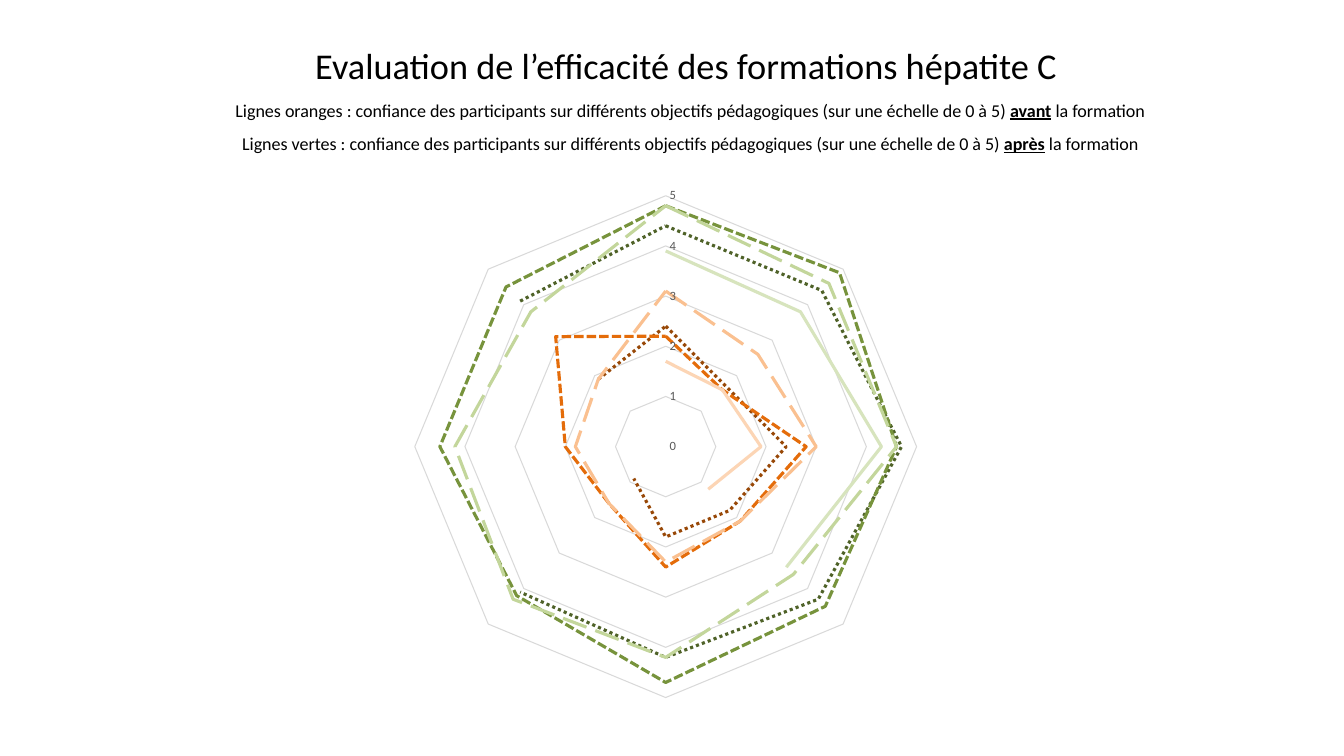
from lxml.etree import SubElement
from pptx import Presentation
from pptx.chart.data import CategoryChartData
from pptx.dml.color import RGBColor
from pptx.enum.chart import XL_CHART_TYPE as ChartType, XL_TICK_MARK as Tick
from pptx.enum.dml import MSO_LINE as Dash
from pptx.enum.text import MSO_ANCHOR as Anchor, MSO_AUTO_SIZE as AutoSize, PP_ALIGN as Align
from pptx.oxml.ns import qn
from pptx.util import Pt

TITLE = "Evaluation de l’efficacité des formations hépatite C "
LEGEND = [("oranges", "avant"), ("vertes", "après")]
SCALE = "confiance des participants sur différents objectifs pédagogiques (sur une échelle de 0 à 5)"

# Each group of trainees: dash, then (colour, scores) before and after
GROUPS = [
    (Dash.ROUND_DOT,
     ("984807", (2.4, 1.7, 2.4, 1.8, 1.8, 0.9, None, 1.9)),
     ("4F6228", (4.4, 4.4, 4.7, 4.3, 4.2, 4.1, None, 4.1))),
    (Dash.SQUARE_DOT,
     ("E46C0A", (2.2, 1.6, 2.8, 2.1, 2.4, 1.6, 2, 3.1)),
     ("77933C", (4.8, 4.9, 4.6, 4.5, 4.7, 4.2, 4.5, 4.5))),
    (Dash.LONG_DASH,
     ("FAC090", (3.1, 2.6, 3, 2.1, 2.3, 1.6, 1.8, 1.9)),
     ("C3D69B", (4.8, 4.6, 4.6, 3.6, 4.2, 4.3, 4.2, 3.8))),
    (Dash.SOLID,
     ("FCD5B5", (1.7, 1.6, 1.9, 1.2, None, None, None, None)),
     ("D7E4BD", (3.9, 3.8, 4.3, 3.4, None, None, None, None))),
]


def rgb(color):
    return RGBColor.from_string(color)


class SlideBuilder:
    font = "Calibri"
    ink, muted, grid = "000000", "595959", "D9D9D9"

    def __init__(self, s):
        self.s = s

    def style(self, font, size, color=ink, bold=False, underline=False):
        font.name, font.size = self.font, Pt(size)
        font.bold, font.underline = bold, underline
        font.color.rgb = rgb(color)

    def run(self, p, text, **fmt):
        r = p.add_run()
        r.text = text
        self.style(r.font, **fmt)

    def heading(self, x, y, w, h, paragraphs):
        """Fill the subtitle placeholder; a paragraph is a list of (text, format)."""
        title, sp = self.s.placeholders
        title.element.getparent().remove(title.element)
        sp.left, sp.top, sp.width, sp.height = map(Pt, (x, y, w, h))
        tf = sp.text_frame
        tf.word_wrap, tf.auto_size = True, AutoSize.NONE
        tf.vertical_anchor = Anchor.TOP
        for i, runs in enumerate(paragraphs):
            p = tf.add_paragraph() if i else tf.paragraphs[0]
            p.alignment, p.line_spacing = Align.CENTER, 0.9
            p.space_before = Pt(10 if i else 0)
            for text, fmt in runs:
                self.run(p, text, **fmt)

    def radar(self, x, y, w, h, series, top, plot_box):
        """Add a radar chart; series is a list of (colour, dash, values)."""
        data = CategoryChartData()
        data.categories = [str(n + 1) for n in range(len(series[0][2]))]
        for i, (_, _, values) in enumerate(series, 1):
            data.add_series(f"Series {i}", values)
        chart = self.s.shapes.add_chart(ChartType.RADAR, *map(Pt, (x, y, w, h)), data).chart
        chart.has_title = chart.has_legend = False
        self.style(chart.font, 10)
        chart.plots[0].vary_by_categories = False
        for ser, (color, dash, _) in zip(chart.plots[0].series, series):
            self.line(ser.format.line, color, 2.25)
            ser.format.line.dash_style = dash

        chart.category_axis.visible = False
        chart.category_axis.has_major_gridlines = False
        axis = chart.value_axis
        axis.minimum_scale, axis.maximum_scale, axis.major_unit = 0, top, 1
        axis.major_tick_mark = axis.minor_tick_mark = Tick.NONE
        axis.format.line.fill.background()
        axis.has_major_gridlines = True
        self.line(axis.major_gridlines.format.line, self.grid, 0.75)
        labels = axis.tick_labels
        labels.number_format, labels.number_format_is_linked = "0", False
        self.style(labels.font, 9, self.muted)
        self.place_plot(chart, plot_box)

    def line(self, line, color, width):
        line.color.rgb, line.width = rgb(color), Pt(width)

    def place_plot(self, chart, box):
        """Fix the inner plot area as fractions of the chart."""
        area = chart.plots[0]._element.getparent()
        for old in area.findall(qn("c:layout")):
            area.remove(old)
        layout = SubElement(area, qn("c:layout"))
        area.insert(0, layout)
        manual = SubElement(layout, qn("c:manualLayout"))
        settings = [("layoutTarget", "inner"), ("xMode", "edge"), ("yMode", "edge")]
        for tag, value in settings + list(zip("xywh", box)):
            SubElement(manual, qn(f"c:{tag}")).set("val", str(value))


def main():
    prs = Presentation()
    prs.slide_width, prs.slide_height = Pt(960), Pt(540)
    slide = SlideBuilder(prs.slides.add_slide(prs.slide_layouts[0]))

    small = {"size": 12.9}
    paragraphs = [[(TITLE, {"size": 25.9})]]
    for color_name, moment in LEGEND:
        paragraphs.append([
            (f"Lignes {color_name} : {SCALE} ", small),
            (moment, {**small, "bold": True, "underline": True}),
            (" la formation", small),
        ])
    slide.heading(133, 31, 720, 92, paragraphs)

    series = [(color, dash, values) for dash, *pair in GROUPS for color, values in pair]
    slide.radar(139, 134, 708.5, 377, series, top=5, plot_box=(0.222, 0.015, 0.506, 0.952))
    prs.save("out.pptx")


if __name__ == "__main__":
    main()
